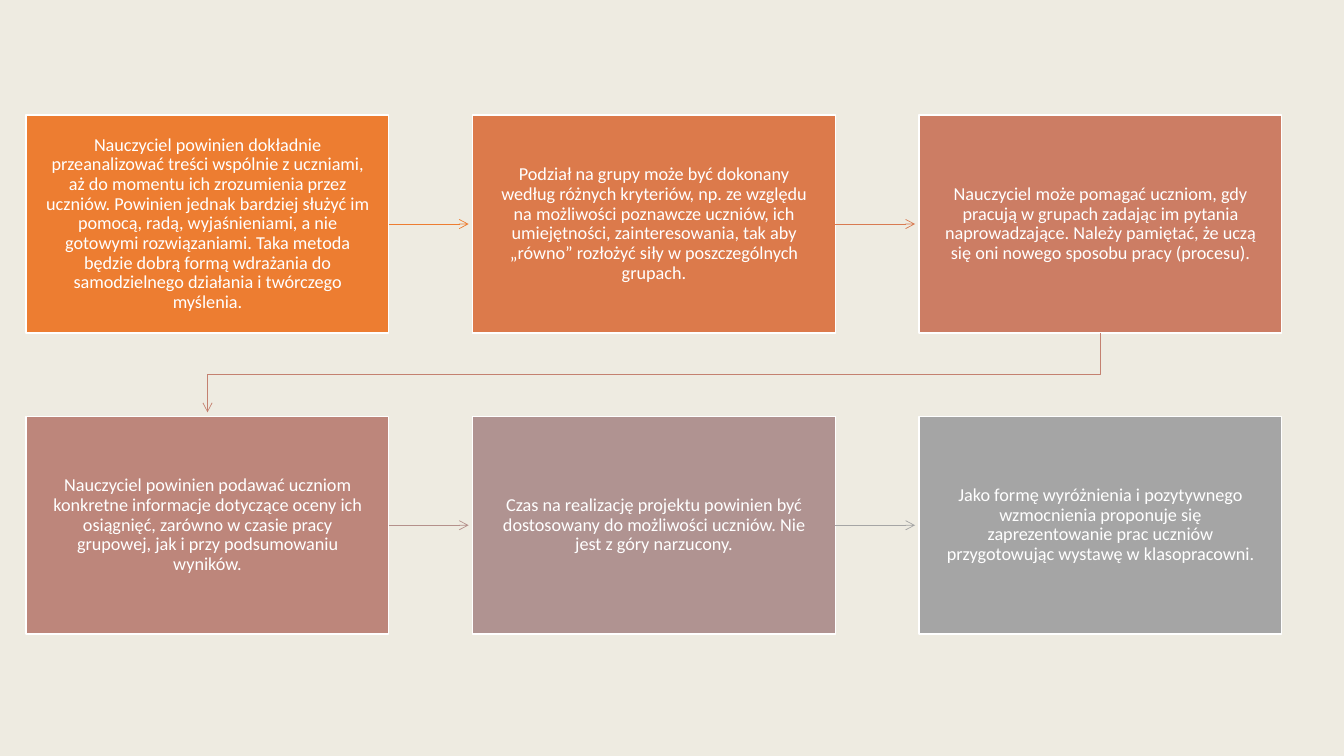
from dataclasses import dataclass

from lxml.etree import SubElement
from pptx import Presentation
from pptx.dml.color import RGBColor
from pptx.enum.shapes import MSO_CONNECTOR, MSO_SHAPE
from pptx.enum.text import MSO_ANCHOR, PP_ALIGN
from pptx.oxml.ns import qn
from pptx.shapes.autoshape import Shape
from pptx.shapes.connector import Connector
from pptx.slide import Slide
from pptx.util import Cm, Pt

# Colours
CREAM = RGBColor(0xEE, 0xEB, 0xE1)
WHITE = RGBColor(0xFF, 0xFF, 0xFF)
ORANGE = RGBColor(0xED, 0x7D, 0x31)
COPPER = RGBColor(0xDC, 0x7A, 0x4B)
COPPER_ARROW = RGBColor(0xD8, 0x7A, 0x51)
TERRACOTTA = RGBColor(0xCC, 0x7D, 0x64)
TERRACOTTA_ARROW = RGBColor(0xC4, 0x81, 0x70)
ROSE = RGBColor(0xBD, 0x86, 0x7B)
ROSE_ARROW = RGBColor(0xB4, 0x90, 0x8B)
MAUVE = RGBColor(0xB0, 0x93, 0x91)
GREY = RGBColor(0xA5, 0xA5, 0xA5)

# Grid of boxes
COLUMNS = 3
LEFT, TOP = Cm(0.66), Cm(2.9)
BOX_WIDTH, BOX_HEIGHT = Cm(9.14), Cm(5.49)
COLUMN_STEP, ROW_STEP = Cm(11.25), Cm(7.59)
ARROW_GAP = Cm(0.1)
RIGHT_SIDE = 3


@dataclass
class Step:
    text: str
    fill: RGBColor
    arrow: RGBColor | None = None


STEPS = [
    Step("Nauczyciel powinien dokładnie przeanalizować treści wspólnie z uczniami, "
         "aż do momentu ich zrozumienia przez uczniów. Powinien jednak bardziej służyć "
         "im pomocą, radą, wyjaśnieniami, a nie gotowymi rozwiązaniami. Taka metoda "
         "będzie dobrą formą wdrażania do samodzielnego działania i twórczego myślenia.",
         ORANGE, ORANGE),
    Step("Podział na grupy może być dokonany według różnych kryteriów, np. ze względu "
         "na możliwości poznawcze uczniów, ich umiejętności, zainteresowania, tak aby "
         "„równo” rozłożyć siły w poszczególnych grupach.",
         COPPER, COPPER_ARROW),
    Step("Nauczyciel może pomagać uczniom, gdy pracują w grupach zadając im pytania "
         "naprowadzające. Należy pamiętać, że uczą się oni nowego sposobu pracy (procesu).",
         TERRACOTTA, TERRACOTTA_ARROW),
    Step("Nauczyciel powinien podawać uczniom konkretne informacje dotyczące oceny ich "
         "osiągnięć, zarówno w czasie pracy grupowej, jak i przy podsumowaniu wyników.",
         ROSE, ROSE_ARROW),
    Step("Czas na realizację projektu powinien być dostosowany do możliwości uczniów. "
         "Nie jest z góry narzucony.",
         MAUVE, GREY),
    Step("Jako formę wyróżnienia i pozytywnego wzmocnienia proponuje się "
         "zaprezentowanie prac uczniów przygotowując wystawę w klasopracowni.",
         GREY),
]


def add_box(slide: Slide, step: Step, index: int) -> Shape:
    row, column = divmod(index, COLUMNS)
    box = slide.shapes.add_shape(
        MSO_SHAPE.RECTANGLE, LEFT + column * COLUMN_STEP, TOP + row * ROW_STEP,
        BOX_WIDTH, BOX_HEIGHT)
    box.shadow.inherit = False
    box.fill.solid()
    box.fill.fore_color.rgb = step.fill
    box.line.color.rgb = WHITE
    box.line.width = Pt(1)

    frame = box.text_frame
    frame.word_wrap = True
    frame.vertical_anchor = MSO_ANCHOR.MIDDLE
    frame.margin_left = frame.margin_right = Cm(0.46)
    frame.margin_top = frame.margin_bottom = Cm(0.48)
    frame.text = step.text
    para = frame.paragraphs[0]
    para.alignment = PP_ALIGN.CENTER
    para.line_spacing = 0.9
    font = para.runs[0].font
    font.name = "Calibri"
    font.size = Pt(13)
    font.color.rgb = WHITE
    return box


def style_arrow(arrow: Shape | Connector, color: RGBColor) -> None:
    arrow.line.color.rgb = color
    arrow.line.width = Pt(0.5)
    SubElement(arrow.line._get_or_add_ln(), qn("a:tailEnd"), type="arrow")


def add_straight_arrow(slide: Slide, box: Shape, target: Shape, color: RGBColor) -> None:
    middle = box.top + box.height // 2
    arrow = slide.shapes.add_connector(
        MSO_CONNECTOR.STRAIGHT, box.left + box.width, middle,
        target.left - ARROW_GAP, middle)
    arrow.begin_connect(box, RIGHT_SIDE)
    style_arrow(arrow, color)
    SubElement(arrow._element.spPr, qn("a:effectLst"))


def add_row_arrow(slide: Slide, box: Shape, target: Shape, color: RGBColor) -> None:
    start_x = box.left + box.width // 2
    end_x = target.left + target.width // 2
    bottom = box.top + box.height
    bend = (bottom + target.top) // 2
    builder = slide.shapes.build_freeform(start_x, bottom)
    builder.add_line_segments(
        [(start_x, bend), (end_x, bend), (end_x, target.top - ARROW_GAP)], close=False)
    arrow = builder.convert_to_shape()
    arrow.shadow.inherit = False
    arrow.fill.background()
    style_arrow(arrow, color)


def main() -> None:
    deck = Presentation()
    deck.slide_width, deck.slide_height = Cm(33.87), Cm(19.05)
    slide = deck.slides.add_slide(deck.slide_layouts[6])
    slide.background.fill.solid()
    slide.background.fill.fore_color.rgb = CREAM

    # Boxes, left to right in two rows
    boxes = [add_box(slide, step, index) for index, step in enumerate(STEPS)]

    # Arrows from each box to the next
    for step, box, target in zip(STEPS, boxes, boxes[1:]):
        add_arrow = add_straight_arrow if box.top == target.top else add_row_arrow
        add_arrow(slide, box, target, step.arrow)

    deck.save("out.pptx")


if __name__ == "__main__":
    main()
